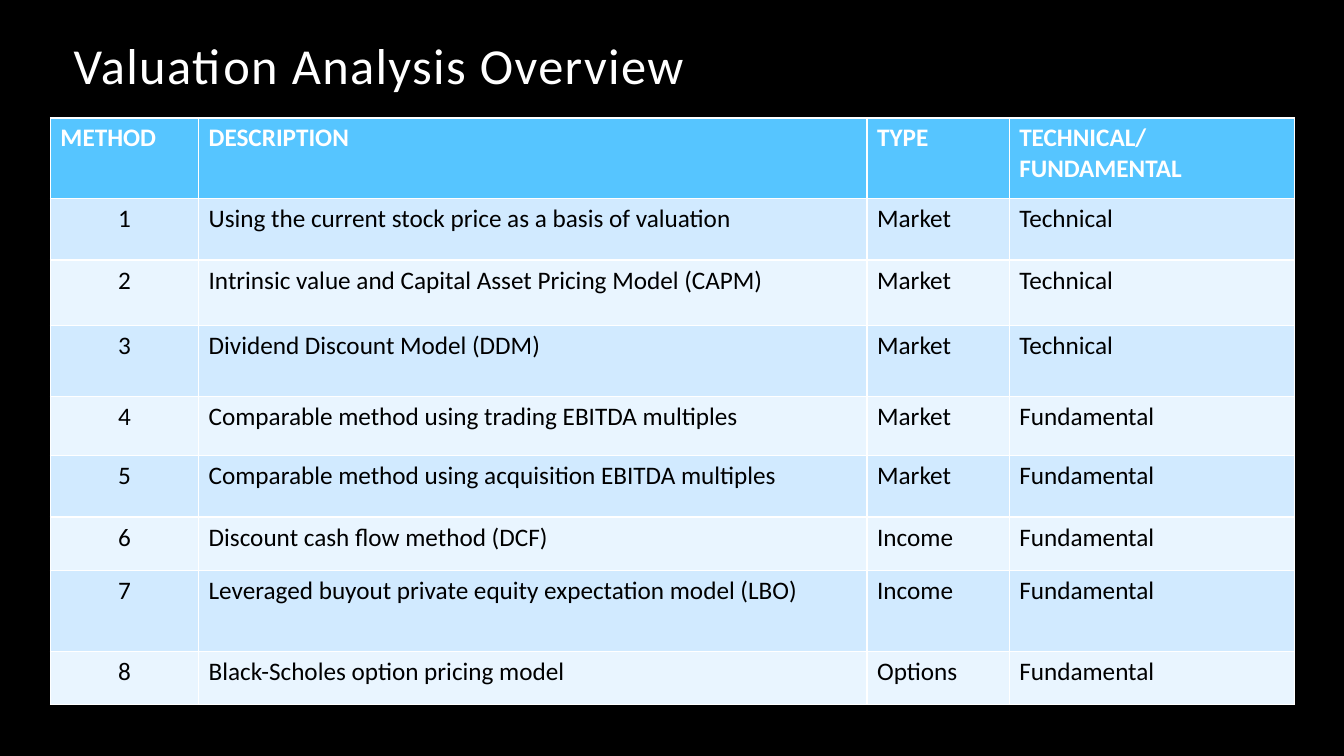
import pptx
import pptx.dml.color
import pptx.enum.text
import pptx.util
from dataclasses import dataclass

TITLE = "Valuation Analysis Overview"
HEADINGS = ("METHOD", "DESCRIPTION", "TYPE", "TECHNICAL/ FUNDAMENTAL")
METHODS = [
    ("Using the current stock price as a basis of valuation", "Market", "Technical"),
    ("Intrinsic value and Capital Asset Pricing Model (CAPM)", "Market", "Technical"),
    ("Dividend Discount Model (DDM)", "Market", "Technical"),
    ("Comparable method using trading EBITDA multiples", "Market", "Fundamental"),
    ("Comparable method using acquisition EBITDA multiples", "Market", "Fundamental"),
    ("Discount cash flow method (DCF)", "Income", "Fundamental"),
    ("Leveraged buyout private equity expectation model (LBO)", "Income", "Fundamental"),
    ("Black-Scholes option pricing model", "Options", "Fundamental"),
]
COLUMN_WIDTHS = (1.47, 6.63, 1.41, 2.83)
ROW_HEIGHTS = (0.8, 0.61, 0.65, 0.7, 0.59, 0.61, 0.53, 0.8, 0.53)


@dataclass(frozen=True)
class Theme:
    font: str = "Calibri"
    title_size: int = 36
    table_size: int = 18
    background: str = "000000"
    light_text: str = "FFFFFF"
    dark_text: str = "000000"
    header: str = "56C5FF"
    bands: tuple = ("D1EAFF", "E9F5FF")


THEME = Theme()
Inches = pptx.util.Inches
ALIGN = pptx.enum.text.PP_ALIGN


def set_fill(fill, color):
    fill.solid()
    fill.fore_color.rgb = pptx.dml.color.RGBColor.from_string(color)


def style_paragraph(para, size, color, bold=False, align=ALIGN.LEFT):
    para.alignment = align
    para.font.name = THEME.font
    para.font.size = pptx.util.Pt(size)
    para.font.bold = bold
    para.font.color.rgb = pptx.dml.color.RGBColor.from_string(color)


def add_title(slide):
    title = slide.shapes.title
    title.left, title.top = Inches(0.63), Inches(0.17)
    title.width, title.height = Inches(10), Inches(0.83)
    frame = title.text_frame
    frame.text = TITLE
    frame.auto_size = pptx.enum.text.MSO_AUTO_SIZE.NONE
    frame.vertical_anchor = pptx.enum.text.MSO_ANCHOR.BOTTOM
    para = frame.paragraphs[0]
    para.line_spacing = 0.9
    style_paragraph(para, THEME.title_size, THEME.light_text)
    para.runs[0]._r.get_or_add_rPr().set("spc", "100")


def add_methods_table(slide):
    """Add the table; its default style draws the white cell borders."""
    rows = [HEADINGS] + [(str(number), *method) for number, method in enumerate(METHODS, 1)]
    table = slide.shapes.add_table(
        len(rows), len(HEADINGS), Inches(0.5), Inches(1.17),
        Inches(sum(COLUMN_WIDTHS)), Inches(sum(ROW_HEIGHTS))).table
    for column, width in zip(table.columns, COLUMN_WIDTHS):
        column.width = Inches(width)
    for row, height in zip(table.rows, ROW_HEIGHTS):
        row.height = Inches(height)
    for row_index, texts in enumerate(rows):
        is_header = row_index == 0
        fill = THEME.header if is_header else THEME.bands[(row_index - 1) % 2]
        color = THEME.light_text if is_header else THEME.dark_text
        for column_index, text in enumerate(texts):
            cell = table.cell(row_index, column_index)
            cell.text = text
            set_fill(cell.fill, fill)
            is_number = column_index == 0 and not is_header
            style_paragraph(cell.text_frame.paragraphs[0], THEME.table_size, color,
                            is_header, ALIGN.CENTER if is_number else ALIGN.LEFT)


def main():
    deck = pptx.Presentation()
    deck.slide_width, deck.slide_height = Inches(13.33), Inches(7.5)
    slide = deck.slides.add_slide(deck.slide_layouts.get_by_name("Title Only"))
    set_fill(slide.background.fill, THEME.background)
    add_title(slide)
    add_methods_table(slide)
    deck.save("out.pptx")


if __name__ == "__main__":
    main()
